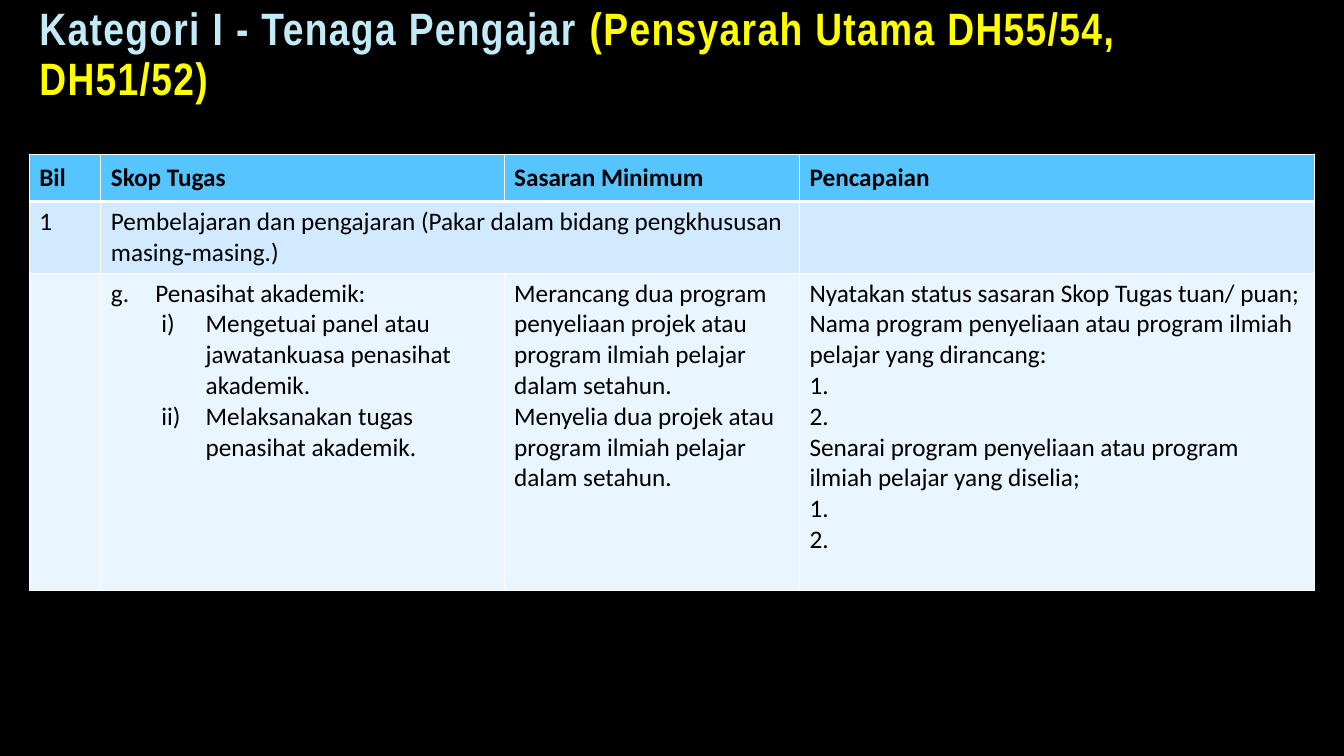
from lxml import etree
from pptx import Presentation
from pptx.dml.color import RGBColor
from pptx.enum import text
from pptx.oxml import ns
from pptx.util import Inches, Pt

# Content
TITLE = [("Kategori I - Tenaga Pengajar ", "C1EBF7"),
         ("(Pensyarah Utama DH55/54, DH51/52)", "FFFF00")]
ROWS = [
    [["Bil"], ["Skop Tugas"], ["Sasaran Minimum"], ["Pencapaian"]],
    [["1"],
     ["Pembelajaran dan pengajaran (Pakar dalam bidang pengkhususan masing‐masing.)"],
     [], []],
    [[],
     ["Penasihat akademik:",
      "Mengetuai panel atau jawatankuasa penasihat akademik.",
      "Melaksanakan tugas penasihat akademik."],
     ["Merancang dua program penyeliaan projek atau program ilmiah pelajar dalam setahun.",
      "Menyelia dua projek atau program ilmiah pelajar dalam setahun."],
     ["Nyatakan status sasaran Skop Tugas tuan/ puan;",
      "Nama program penyeliaan atau program ilmiah pelajar yang dirancang:",
      "1.", "2.",
      "Senarai program penyeliaan atau program ilmiah pelajar yang diselia;",
      "1.", "2."]],
]
# Level, left indent, numbering of each duty under "Skop Tugas"
ROMAN = (1, 0.94, {"type": "romanLcParenR"})
NUMBERING = {(2, 1): [(0, 0.44, {"type": "alphaLcPeriod", "startAt": "7"}), ROMAN, ROMAN]}
HANGING = 0.44

COL_WIDTHS = [0.71, 4, 2.93, 5.11]
ROW_HEIGHTS = [0.47, 0.71, 3.15]
ROW_FILLS = ["56C5FF", "D1EAFF", "E9F5FF"]
TABLE_LEFT, TABLE_TOP = 0.29, 1.53


def color(value):
    return RGBColor.from_string(value)


def style(font, value, **formats):
    for name, setting in formats.items():
        setattr(font, name, setting)
    font.color.rgb = color(value)


def number(p, level, indent, scheme):
    p.level = level
    pPr = p._p.get_or_add_pPr()
    pPr.set("marL", str(Inches(indent)))
    pPr.set("indent", str(-Inches(HANGING)))
    etree.SubElement(pPr, ns.qn("a:buFont"), typeface="+mj-lt")
    etree.SubElement(pPr, ns.qn("a:buAutoNum"), scheme)


def border(cell, widths):
    tcPr = cell._tc.get_or_add_tcPr()
    for side, width in widths.items():
        ln = etree.SubElement(tcPr, ns.qn(f"a:ln{side}"), w=str(Pt(width)))
        fill = etree.SubElement(ln, ns.qn("a:solidFill"))
        etree.SubElement(fill, ns.qn("a:srgbClr"), val="FFFFFF")


def add_title(s):
    sp = s.shapes.title
    box = {"left": 0.29, "top": 0.42, "width": 11.37, "height": 0.67}
    for name, length in box.items():
        setattr(sp, name, Inches(length))
    tf = sp.text_frame
    tf.word_wrap = True
    tf.auto_size = text.MSO_AUTO_SIZE.NONE
    tf.vertical_anchor = text.MSO_ANCHOR.BOTTOM
    p = tf.paragraphs[0]
    p.alignment = text.PP_ALIGN.LEFT
    p.line_spacing = 0.9
    for words, value in TITLE:
        r = p.add_run()
        r.text = words
        style(r.font, value, name="Arial Narrow", size=Pt(32.4), bold=True)
        r.font._element.set("spc", "100")


def fill_cell(cell, row, col):
    header = row == 0
    border(cell, {"L": 1, "R": 1, "T": 3 if row == 1 else 1, "B": 3 if header else 1})
    cell.fill.solid()
    cell.fill.fore_color.rgb = color(ROW_FILLS[row])
    cell.vertical_anchor = text.MSO_ANCHOR.MIDDLE if header else text.MSO_ANCHOR.TOP
    tf = cell.text_frame
    for i, words in enumerate(ROWS[row][col]):
        p = tf.paragraphs[0] if i == 0 else tf.add_paragraph()
        if (row, col) in NUMBERING:
            number(p, *NUMBERING[row, col][i])
        r = p.add_run()
        r.text = words
        style(r.font, "000000", name="Calibri", size=Pt(18), bold=header)


def add_duty_table(s):
    table = s.shapes.add_table(
        len(ROWS), len(COL_WIDTHS), Inches(TABLE_LEFT), Inches(TABLE_TOP),
        Inches(sum(COL_WIDTHS)), Inches(sum(ROW_HEIGHTS))).table
    for column, width in zip(table.columns, COL_WIDTHS):
        column.width = Inches(width)
    for table_row, height in zip(table.rows, ROW_HEIGHTS):
        table_row.height = Inches(height)
    table.cell(1, 1).merge(table.cell(1, 2))
    for row in range(len(ROWS)):
        for col in range(len(COL_WIDTHS)):
            fill_cell(table.cell(row, col), row, col)


def main():
    prs = Presentation()
    prs.slide_width, prs.slide_height = Inches(13.33), Inches(7.5)
    s = prs.slides.add_slide(prs.slide_layouts[5])
    s.background.fill.solid()
    s.background.fill.fore_color.rgb = color("000000")
    add_title(s)
    add_duty_table(s)
    prs.save("out.pptx")


if __name__ == "__main__":
    main()
